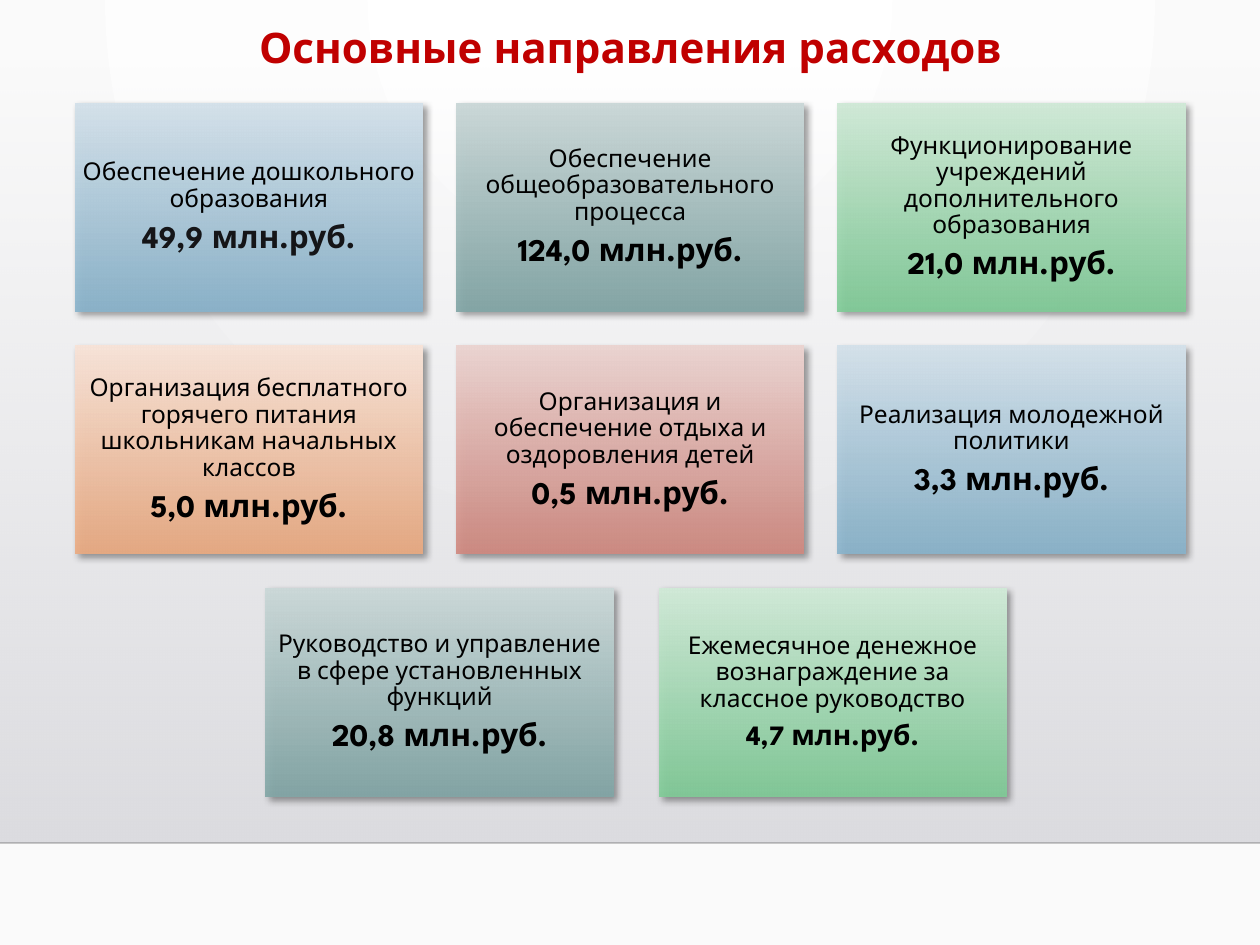
"""Build a slide with a grid of education spending cards."""
import lxml.etree
import pptx
import pptx.dml.color
import pptx.enum.shapes
import pptx.enum.text
import pptx.oxml.ns
import pptx.util
from dataclasses import dataclass

Pt = pptx.util.Pt
RGB = pptx.dml.color.RGBColor.from_string
qn = pptx.oxml.ns.qn


@dataclass(frozen=True)
class Theme:
    font: str = "League Spartan"
    title: str = "C00000"
    text: str = "000000"
    amount: str = "151518"
    line: str = "000001"
    page: tuple = ("FFFFFF", "FAFAFA")
    panel: tuple = ("DCDCE0", "DEDEE2")
    blue: tuple = ("D4E1EA", "8AB4CC")
    teal: tuple = ("CBD8D8", "83A7A7")
    green: tuple = ("D0E9D7", "81CC98")
    orange: tuple = ("F7E3D8", "EBAB82")
    red: tuple = ("EBD4D1", "D18A81")
    title_size: int = 24
    label_size: int = 14
    amount_size: int = 18
    small_amount_size: int = 16


def add(parent, tag, **attrs):
    return lxml.etree.SubElement(parent, qn(tag), {k: str(v) for k, v in attrs.items()})


def set_alpha(color, percent):
    add(color, "a:alpha", val=percent * 1000)


class Deck:
    def __init__(self, theme, width, height):
        self.theme = theme
        self.prs = pptx.Presentation()
        self.prs.slide_width, self.prs.slide_height = Pt(width), Pt(height)
        self.s = self.prs.slides.add_slide(self.prs.slide_layouts[6])

    def gradient(self, fill, colors):
        fill.gradient()
        fill.gradient_angle = 270
        for stop, color in zip(fill.gradient_stops, colors):
            stop.color.rgb = RGB(color)

    def background(self, colors):
        self.gradient(self.s.background.fill, colors)
        grad = self.s.element.find(".//" + qn("a:gradFill"))
        grad.remove(grad.find(qn("a:lin")))
        radial = add(grad, "a:path", path="circle")
        add(radial, "a:fillToRect", l=43000, t=0, r=43000, b=100000)

    def rect(self, x, y, w, h, colors, alphas):
        kind = pptx.enum.shapes.MSO_SHAPE.RECTANGLE
        sp = self.s.shapes.add_shape(kind, Pt(x), Pt(y), Pt(w), Pt(h))
        sp.shadow.inherit = False
        sp.line.fill.background()
        self.gradient(sp.fill, colors)
        stops = sp.element.spPr.iter(qn("a:srgbClr"))
        for color, alpha in zip(list(stops), alphas):
            set_alpha(color, alpha)
        return sp

    def rule(self, x1, y1, x2, y2):
        kind = pptx.enum.shapes.MSO_CONNECTOR.STRAIGHT
        cx = self.s.shapes.add_connector(kind, Pt(x1), Pt(y1), Pt(x2), Pt(y2))
        cx.line.width = Pt(1)
        cx.line.color.rgb = RGB(self.theme.line)
        set_alpha(cx.element.spPr.find(".//" + qn("a:srgbClr")), 20)
        add(cx.element.spPr, "a:effectLst")

    def paragraph(self, p, text, size, color, bold=False):
        p.alignment = pptx.enum.text.PP_ALIGN.CENTER
        r = p.add_run()
        r.text = text
        r.font.name, r.font.size, r.font.bold = self.theme.font, Pt(size), bold
        r.font.color.rgb = RGB(color)

    def title(self, x, y, w, h, text):
        tf = self.s.shapes.add_textbox(Pt(x), Pt(y), Pt(w), Pt(h)).text_frame
        tf.word_wrap = True
        self.paragraph(tf.paragraphs[0], text, self.theme.title_size, self.theme.title, True)

    def card(self, x, y, w, h, colors, label, amount, amount_size, amount_color):
        sp = self.rect(x, y, w, h, colors, (100, 92))
        effects = sp.element.spPr.find(qn("a:effectLst"))
        shadow = add(effects, "a:outerShdw", blurRad=Pt(4), dist=Pt(3),
                     dir=45 * 60000, algn="tl", rotWithShape=0)
        set_alpha(add(shadow, "a:srgbClr", val="000000"), 40)
        tf = sp.text_frame
        tf.word_wrap = True
        tf.vertical_anchor = pptx.enum.text.MSO_ANCHOR.MIDDLE
        tf.margin_left = tf.margin_right = tf.margin_top = tf.margin_bottom = Pt(4.2)
        rows = ((tf.paragraphs[0], label, self.theme.label_size, self.theme.text, False),
                (tf.add_paragraph(), amount, amount_size, amount_color, True))
        for p, text, size, color, bold in rows:
            p.line_spacing = 0.9
            p.space_after = Pt(0.35 * size)
            self.paragraph(p, text, size, color, bold)


def main():
    t = Theme()
    deck = Deck(t, 720, 540)
    deck.background(t.page)
    deck.rect(0, 36.7, 720, 445, t.panel, (0, 100))
    deck.rule(0, 481.7, 720, 481.7)
    card_w, card_h, top, row_pitch = 198.4, 119, 59, 138.6
    rows = [
        (43, 217.9, [
            (t.blue, "Обеспечение дошкольного образования", "49,9", t.amount_size, t.amount),
            (t.teal, "Обеспечение общеобразовательного процесса", "124,0", t.amount_size, t.text),
            (t.green, "Функционирование учреждений дополнительного образования", "21,0",
             t.amount_size, t.text),
        ]),
        (43, 217.9, [
            (t.orange, "Организация бесплатного горячего питания школьникам начальных классов",
             "5,0", t.amount_size, t.text),
            (t.red, "Организация и обеспечение отдыха и оздоровления детей", "0,5",
             t.amount_size, t.text),
            (t.blue, "Реализация молодежной политики", "3,3", t.amount_size, t.text),
        ]),
        (152, 224.6, [
            (t.teal, "Руководство и управление в сфере установленных функций", "20,8",
             t.amount_size, t.text),
            (t.green, "Ежемесячное денежное вознаграждение за классное руководство", "4,7",
             t.small_amount_size, t.text),
        ]),
    ]
    for i, (left, pitch, cards) in enumerate(rows):
        for j, (colors, label, value, size, color) in enumerate(cards):
            deck.card(left + j * pitch, top + i * row_pitch, card_w, card_h,
                      colors, label, f"{value} млн.руб.", size, color)
    deck.title(42.5, 8.6, 635.8, 36.7, "Основные направления расходов")
    deck.prs.save("out.pptx")


if __name__ == "__main__":
    main()
